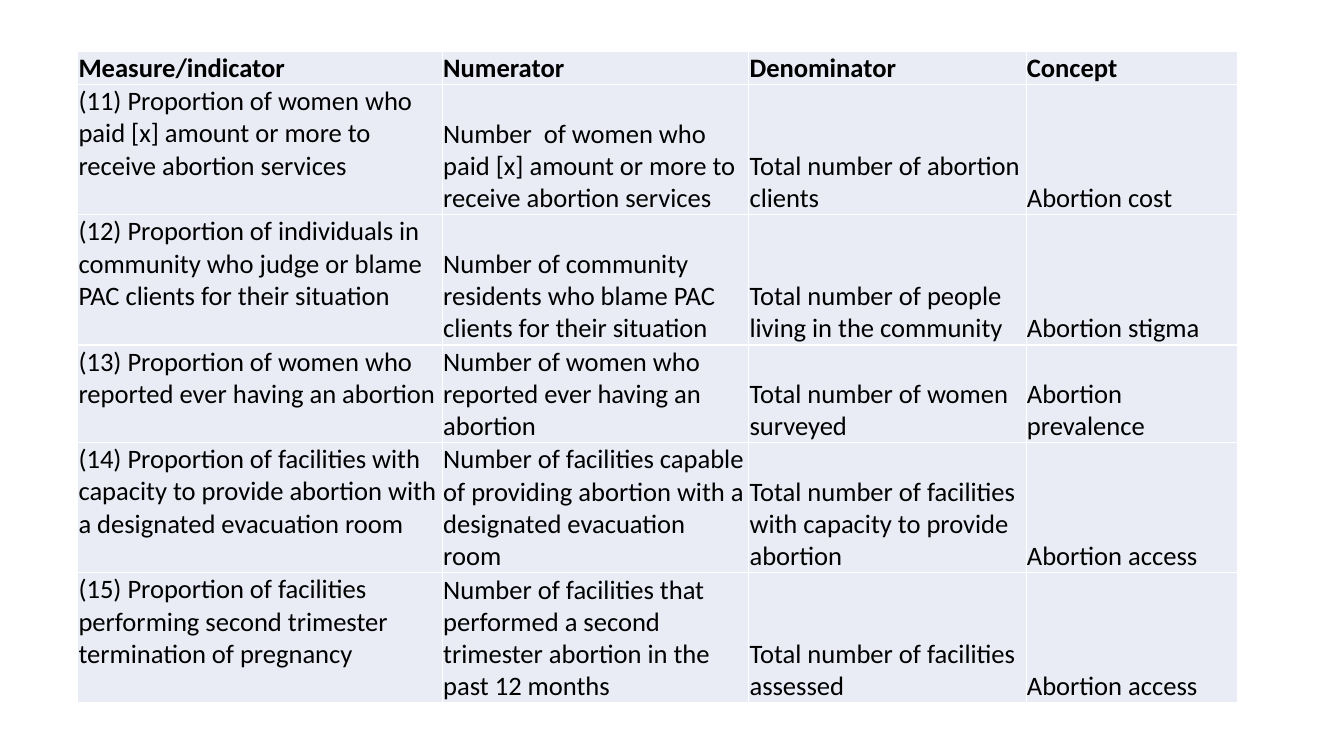
from dataclasses import dataclass

from lxml import etree
from pptx import Presentation
from pptx import util as u
from pptx.dml.color import RGBColor
from pptx.enum import text
from pptx.oxml import ns


@dataclass(frozen=True)
class Theme:
    font: str = "Calibri"
    size: float = 19
    ink: str = "000000"
    cell: str = "E9EBF5"
    border: str = "FFFFFF"
    border_width: float = 1


THEME = Theme()
COLUMN_WIDTHS = (9.19, 7.72, 6.99, 5.33)
LINE_HEIGHT = 0.82
LINES_PER_ROW = (1, 4, 4, 3, 4, 4)

HEADINGS = ("Measure/indicator", "Numerator", "Denominator", "Concept")
INDICATORS = (
    ("(11) Proportion of women who paid [x] amount or more to receive abortion services",
     "Number  of women who paid [x] amount or more to receive abortion services",
     "Total number of abortion\nclients",
     "Abortion cost"),
    ("(12) Proportion of individuals in community who judge or blame PAC clients for their situation",
     "Number of community residents who blame PAC clients for their situation",
     "Total number of people living in the community",
     "Abortion stigma"),
    ("(13) Proportion of women who reported ever having an abortion",
     "Number of women who reported ever having an abortion",
     "Total number of women\nsurveyed",
     "Abortion prevalence"),
    ("(14) Proportion of facilities with capacity to provide abortion with a designated evacuation room",
     "Number of facilities capable of providing abortion with a designated evacuation room",
     "Total number of facilities with capacity to provide abortion",
     "Abortion access"),
    ("(15) Proportion of facilities performing second trimester termination of pregnancy",
     "Number of facilities that performed a second trimester abortion in the past 12 months",
     "Total number of facilities\nassessed",
     "Abortion access"),
)


def add_borders(cell):
    properties = cell._tc.get_or_add_tcPr()
    for position, side in enumerate(("lnL", "lnR", "lnT", "lnB")):
        line = etree.Element(ns.qn(f"a:{side}"), w=str(u.Pt(THEME.border_width)))
        fill = etree.SubElement(line, ns.qn("a:solidFill"))
        etree.SubElement(fill, ns.qn("a:srgbClr"), val=THEME.border)
        properties.insert(position, line)


def fill_cell(cell, wording, bold, anchor):
    cell.margin_left = cell.margin_right = cell.margin_top = u.Cm(0.02)
    cell.margin_bottom = u.Cm(0)
    cell.vertical_anchor = anchor
    cell.fill.solid()
    cell.fill.fore_color.rgb = RGBColor.from_string(THEME.cell)
    add_borders(cell)
    cell.text_frame.text = wording
    for paragraph in cell.text_frame.paragraphs:
        for run in paragraph.runs:
            run.font.name = THEME.font
            run.font.size = u.Pt(THEME.size)
            run.font.bold = bold
            run.font.color.rgb = RGBColor.from_string(THEME.ink)


def add_indicator_table(slide):
    content = (HEADINGS, *INDICATORS)
    table = slide.shapes.add_table(
        len(content), len(HEADINGS), u.Cm(1.96), u.Cm(1.3),
        u.Cm(sum(COLUMN_WIDTHS)), u.Cm(LINE_HEIGHT * sum(LINES_PER_ROW))).table
    table.horz_banding = False
    for column, width in zip(table.columns, COLUMN_WIDTHS):
        column.width = u.Cm(width)
    for row, lines in zip(table.rows, LINES_PER_ROW):
        row.height = u.Cm(LINE_HEIGHT * lines)

    # Measures start at the top of their row, all other cells sit at the bottom
    for row_index, wordings in enumerate(content):
        for column_index, wording in enumerate(wordings):
            is_measure = row_index > 0 and column_index == 0
            anchor = text.MSO_ANCHOR.TOP if is_measure else text.MSO_ANCHOR.BOTTOM
            fill_cell(table.cell(row_index, column_index), wording,
                      bold=row_index == 0, anchor=anchor)


def main():
    deck = Presentation()
    deck.slide_width, deck.slide_height = u.Cm(33.87), u.Cm(19.05)
    blank_layout = deck.slide_layouts[6]
    add_indicator_table(deck.slides.add_slide(blank_layout))
    deck.save("out.pptx")


if __name__ == "__main__":
    main()
